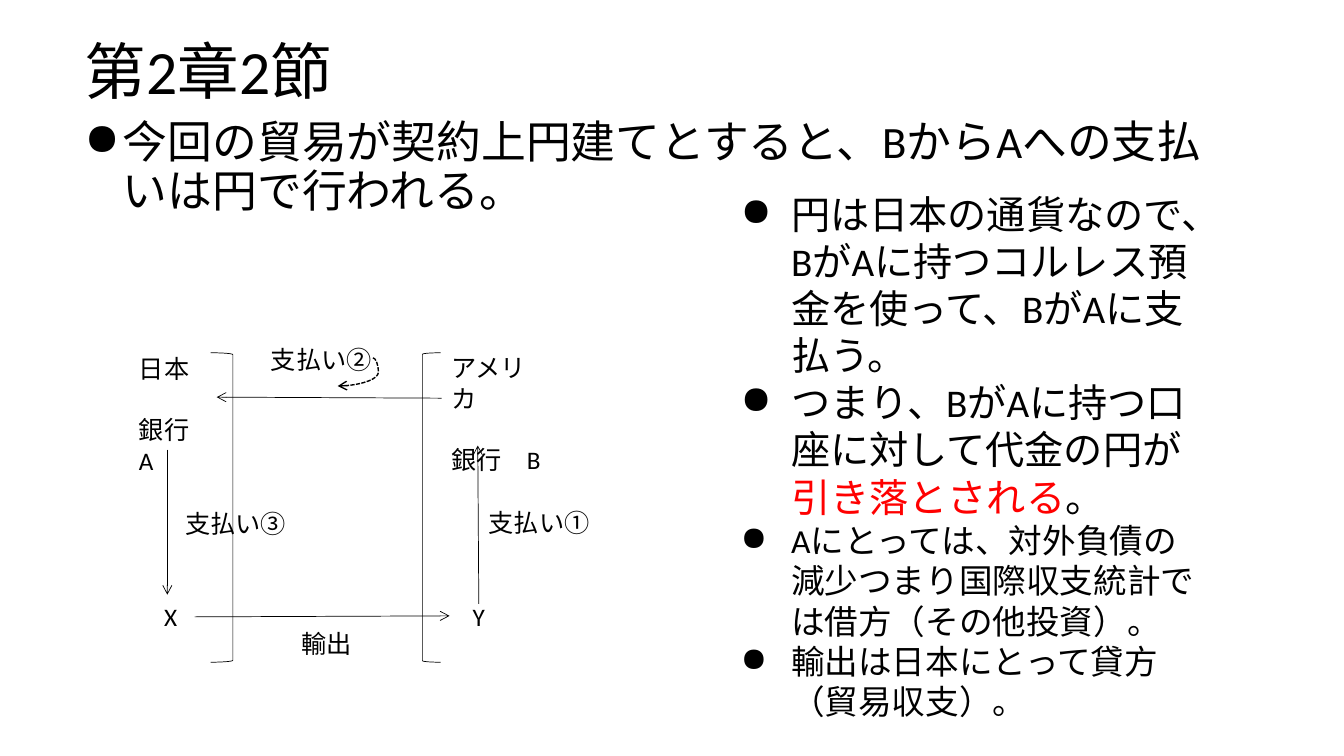
from lxml import etree
from pptx import Presentation
from pptx import util as u
from pptx.dml.color import RGBColor
from pptx.enum import dml, shapes, text
from pptx.oxml import ns

BLACK = RGBColor(0, 0, 0)
RED = RGBColor(255, 0, 0)
FONT = "Calibri"
CELL = u.Inches(0.1)
COLUMNS, ROWS = 133.33, 75
LABEL_SIZE = 18
COUNTRY_GAP = 22

TITLE = "第2章2節"
PREMISE = "今回の貿易が契約上円建てとすると、BからAへの支払いは円で行われる。"
EXPLANATION = [
    (28, [("円は日本の通貨なので、BがAに持つコルレス預金を使って、BがAに支払う。", BLACK)]),
    (28, [("つまり、BがAに持つ口座に対して代金の円が", BLACK),
          ("引き落とされる", RED), ("。", BLACK)]),
    (24, [("Aにとっては、対外負債の減少つまり国際収支統計では借方（その他投資）。", BLACK)]),
    (24, [("輸出は日本にとって貸方（貿易収支）。", BLACK)]),
]
COUNTRIES = [
    ((12.8, 34.6, 10.1, 10.1), ["日本", "銀行　A"]),
    ((43.8, 34.5, 11.3, 10.1), ["アメリカ", "銀行　B"]),
]
LABELS = [
    ((15.3, 59.2, 4), "X"),
    ((45.9, 59.2, 3.2), "Y"),
    ((47.5, 49.8, 12.2), "支払い➀"),
    ((17.4, 49.9, 12.9), "支払い➂"),
    ((25.9, 33.7, 13), "支払い②"),
    ((28.9, 61.8, 7.2), "輸出"),
]
BRACKETS = [
    (shapes.MSO_SHAPE.RIGHT_BRACKET, (20.9, 35, 2.2, 30.7)),
    (shapes.MSO_SHAPE.LEFT_BRACKET, (41.9, 35, 1.8, 30.7)),
]
ARROWS = [
    (16.6, 44.6, 16.6, 59),
    (19.3, 61.2, 44.6, 61.1),
    (43.8, 39.5, 21.5, 39.4),
    (47.5, 59.9, 47.4, 44.2),
]
RETURN_CURVE = (37, 35.5, 33.5, 38.3)
CURVE_BULGE = -15700


def on_grid(cells):
    return [round(cell * CELL) for cell in cells]


def add_text(slide, box, paragraphs, indent=0, spacing=1, before=0,
             anchor=text.MSO_ANCHOR.TOP):
    frame = slide.shapes.add_textbox(*on_grid(box)).text_frame
    frame.word_wrap = True
    frame.vertical_anchor = anchor
    for index, (size, runs) in enumerate(paragraphs):
        paragraph = frame.add_paragraph() if index else frame.paragraphs[0]
        paragraph.line_spacing = spacing
        paragraph.space_before = u.Pt(before if index else 0)
        if indent:
            properties = paragraph._p.get_or_add_pPr()
            properties.set("marL", str(u.Inches(indent)))
            properties.set("indent", str(-u.Inches(indent)))
            etree.SubElement(properties, ns.qn("a:buChar"), char="●")
        for words, colour in runs:
            run = paragraph.add_run()
            run.text = words
            run.font.name = FONT
            run.font.size = u.Pt(size)
            run.font.color.rgb = colour


def plain(size, *lines):
    return [(size, [(line, BLACK)]) for line in lines]


def add_arrow(slide, ends, kind=shapes.MSO_CONNECTOR.STRAIGHT, width=0.5):
    arrow = slide.shapes.add_connector(kind, *on_grid(ends))
    arrow.line.color.rgb = BLACK
    arrow.line.width = u.Pt(width)
    etree.SubElement(arrow.line._get_or_add_ln(), ns.qn("a:tailEnd"), type="arrow")
    etree.SubElement(arrow._element.spPr, ns.qn("a:effectLst"))
    return arrow


def add_bracket(slide, kind, box):
    bracket = slide.shapes.add_shape(kind, *on_grid(box))
    bracket.shadow.inherit = False
    bracket.fill.background()
    bracket.line.color.rgb = BLACK
    bracket.line.width = u.Pt(0.5)


def main():
    presentation = Presentation()
    presentation.slide_width, presentation.slide_height = on_grid((COLUMNS, ROWS))
    slide = presentation.slides.add_slide(presentation.slide_layouts[6])

    add_text(slide, (7.4, 11.4, 117, 58.5), plain(32, PREMISE), indent=0.38, spacing=0.9)
    add_text(slide, (7.4, 3.4, 116.2, 7.9), plain(44, TITLE), spacing=0.9,
             anchor=text.MSO_ANCHOR.MIDDLE)
    add_text(slide, (72.5, 18.4, 47.8, 54.2), EXPLANATION, indent=0.5)

    for kind, box in BRACKETS:
        add_bracket(slide, kind, box)
    for box, lines in COUNTRIES:
        add_text(slide, box, plain(LABEL_SIZE, *lines), before=COUNTRY_GAP)
    for ends in ARROWS:
        add_arrow(slide, ends)
    for (left, top, width), words in LABELS:
        add_text(slide, (left, top, width, 4), plain(LABEL_SIZE, words))

    curve = add_arrow(slide, RETURN_CURVE, shapes.MSO_CONNECTOR.CURVE, width=1)
    curve.line.dash_style = dml.MSO_LINE.SQUARE_DOT
    adjustments = curve._element.spPr.find(ns.qn("a:prstGeom")).get_or_add_avLst()
    etree.SubElement(adjustments, ns.qn("a:gd"), name="adj1", fmla=f"val {CURVE_BULGE}")

    presentation.save("out.pptx")


if __name__ == "__main__":
    main()
